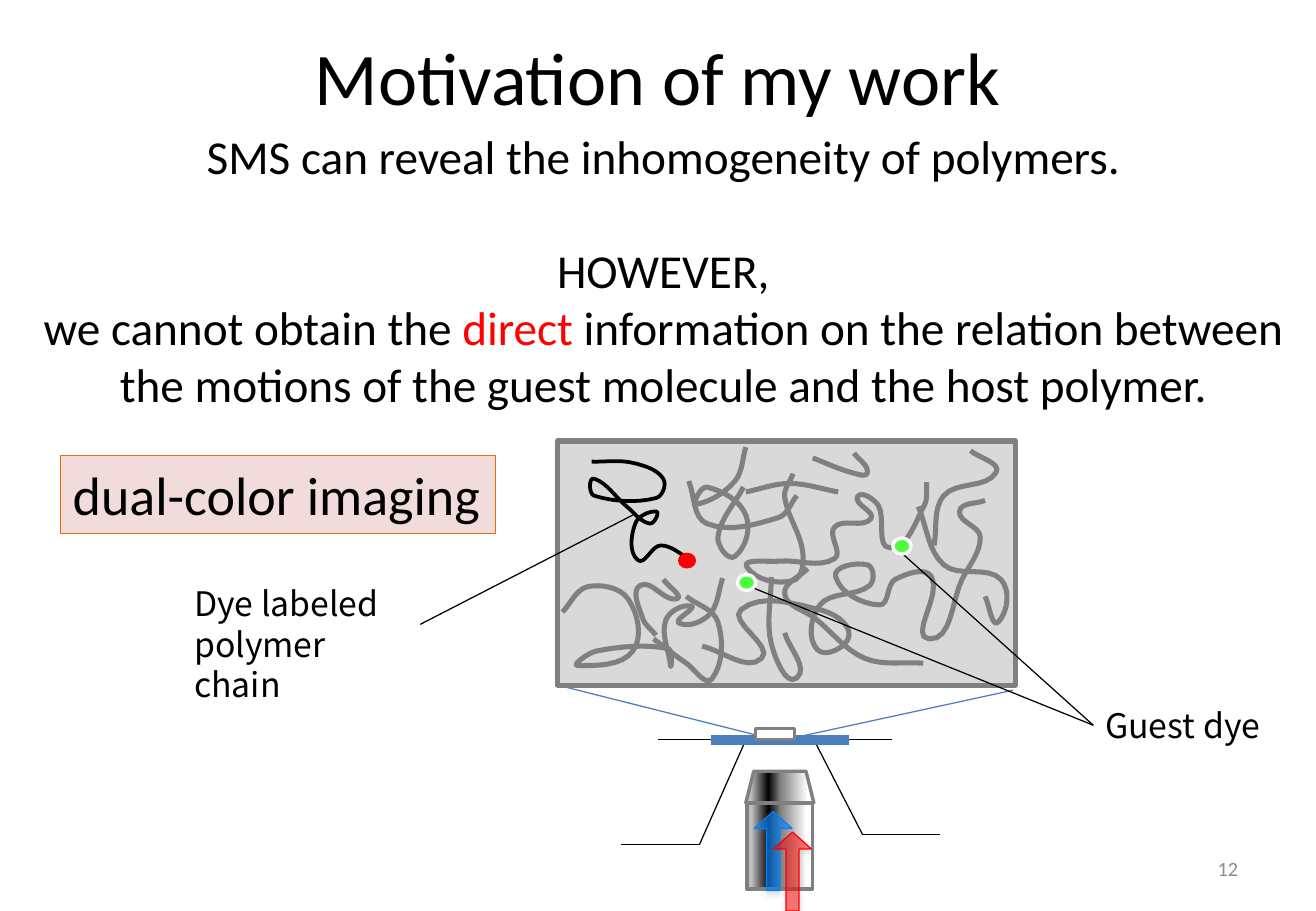
from dataclasses import dataclass
from math import hypot

from lxml.etree import SubElement
from pptx import Presentation
from pptx.dml.color import RGBColor
from pptx.enum.shapes import MSO_CONNECTOR, MSO_SHAPE as Preset
from pptx.enum.text import MSO_ANCHOR as Anchor, PP_ALIGN as Align
from pptx.oxml.ns import qn
from pptx.util import Pt


@dataclass(frozen=True)
class Theme:
    """Colours, fonts and type sizes of the slide."""
    black: str = "000000"
    white: str = "FFFFFF"
    gray: str = "808080"
    panel: str = "D9D9D9"
    red: str = "FF0000"
    green: str = "4BFD3D"
    light_blue: str = "0080FF"
    glass: str = "4B7EBC"
    callout: str = "F2DCDB"
    orange: str = "E46C0A"
    number: str = "8C8C8C"
    metal: tuple = ((7, "BFBFBF"), (33, "000000"), (51, "808080"), (91, "FFFFFF"))
    font: str = "Calibri"
    label_font: str = "Noto Sans CJK JP"
    title_size: int = 44
    callout_size: int = 32
    body_size: int = 28
    label_size: int = 20
    number_size: int = 12


@dataclass(frozen=True)
class Box:
    """A rectangle in points."""
    left: float
    top: float
    width: float
    height: float

    def inner(self, left, top, width, height):
        """Return a box placed relative to this one."""
        return Box(self.left + left, self.top + top, width, height)

    def point(self, x, y):
        """Return a point placed relative to this box."""
        return self.left + x, self.top + y

    def lengths(self):
        """Return the four lengths for python-pptx."""
        return Pt(self.left), Pt(self.top), Pt(self.width), Pt(self.height)


THEME = Theme()
GRID_COLUMNS = 377
CHAIN = [(28, 17), (62, 18), (87, 31), (81, 47), (30, 45), (30, 31), (57, 54), (76, 68), (81, 58),
         (64, 68), (66, 98), (85, 86), (110, 98)]
HOST_STRANDS = [
    [(4, 141), (25, 120), (58, 130), (62, 173), (17, 185), (32, 173), (91, 171), (93, 185), (89, 148),
     (110, 136), (100, 150), (125, 143), (136, 113)],
    [(119, 169), (168, 179), (151, 139), (216, 139), (240, 160), (214, 172), (216, 135), (257, 119),
     (255, 102), (229, 112), (265, 135), (278, 114), (308, 112), (306, 163), (333, 114), (348, 79),
     (331, 58), (352, 49)],
    [(194, 27), (187, 46), (202, 92), (194, 115), (156, 104), (183, 99), (228, 97), (228, 71), (258, 64),
     (247, 46), (264, 53), (274, 88), (302, 53), (304, 34)],
    [(155, 5), (146, 33), (115, 52), (123, 38), (155, 61), (146, 95), (132, 79), (153, 38)],
    [(301, 183), (253, 179), (212, 146), (187, 126), (206, 105)],
    [(340, 8), (361, 26), (318, 45), (310, 86)],
    [(197, 45), (182, 63), (123, 68), (108, 33)],
    [(79, 163), (106, 183), (127, 196), (132, 149), (106, 128)],
    [(352, 128), (363, 149), (365, 114), (318, 102), (297, 54)],
    [(176, 112), (176, 167), (197, 195), (187, 158)],
    [(231, 42), (191, 35), (155, 42)],
    [(87, 114), (98, 130), (68, 119), (70, 146), (81, 160)],
    [(210, 14), (242, 26), (255, 26), (244, 10)],
]


def color(value):
    """Turn a hex string into a colour."""
    return RGBColor.from_string(value)


def write(frame, paragraphs, size, font=THEME.font, ink=THEME.black, align=Align.LEFT, anchor=Anchor.TOP):
    """Fill a text frame; each paragraph is a list of (text, colour or None) runs."""
    frame.word_wrap = True
    frame.vertical_anchor = anchor
    for index, runs in enumerate(paragraphs):
        paragraph = frame.add_paragraph() if index else frame.paragraphs[0]
        paragraph.alignment = align
        paragraph.font.size, paragraph.font.name = Pt(size), font
        paragraph.font.color.rgb = color(ink)
        for text, tint in runs:
            run = paragraph.add_run()
            run.text = text
            if tint:
                run.font.color.rgb = color(tint)
    return frame


def add_text(slide, box, text, size, **style):
    """Add a text box with one paragraph."""
    return write(slide.shapes.add_textbox(*box.lengths()).text_frame, [[(text, None)]], size, **style)


def add_preset(slide, preset, box, fill=None, line=None, weight=0.75):
    """Add a preset shape without shadow."""
    shape = slide.shapes.add_shape(preset, *box.lengths())
    shape.shadow.inherit = False
    if fill:
        shape.fill.solid()
        shape.fill.fore_color.rgb = color(fill)
    if line:
        shape.line.color.rgb, shape.line.width = color(line), Pt(weight)
    else:
        shape.line.fill.background()
    return shape


def add_line(slide, *points, ink=THEME.black, weight=0.75):
    """Join consecutive points with straight connectors."""
    for start, end in zip(points, points[1:]):
        line = slide.shapes.add_connector(MSO_CONNECTOR.STRAIGHT, *map(Pt, start + end))
        line.line.color.rgb, line.line.width = color(ink), Pt(weight)
        SubElement(line._element.spPr, qn("a:effectLst"))


def smooth(nodes, steps=8):
    """Return points on a smooth curve through the nodes."""
    padded = [nodes[0], *nodes, nodes[-1]]
    curve = [nodes[0]]
    for before, start, end, after in zip(padded, padded[1:], padded[2:], padded[3:]):
        reach = hypot(end[0] - start[0], end[1] - start[1])
        pull, push = ([(b - a) * reach / (hypot(q[0] - p[0], q[1] - p[1]) or 1) for a, b in zip(p, q)]
                      for p, q in ((before, end), (start, after)))
        for t in (step / steps for step in range(1, steps + 1)):
            ease = t * t * (3 - 2 * t)
            curve.append(tuple(a + ease * (b - a) + t * (1 - t) * ((1 - t) * m - t * n)
                               for a, b, m, n in zip(start, end, pull, push)))
    return curve


def add_strand(slide, panel, nodes, ink, weight):
    """Draw a polymer strand whose nodes lie on the panel grid."""
    unit = panel.width / GRID_COLUMNS
    first, *rest = [tuple(map(Pt, panel.point(x * unit, y * unit))) for x, y in smooth(nodes)]
    shape = slide.shapes.build_freeform(*first).add_line_segments(rest, close=False).convert_to_shape()
    shape.shadow.inherit = False
    shape.fill.background()
    shape.line.color.rgb, shape.line.width = color(ink), Pt(weight)


def add_metal(slide, preset, box):
    """Add one part of the objective with its metallic gradient."""
    shape = add_preset(slide, preset, box, line=THEME.gray, weight=2)
    shape.fill.gradient()
    shape.fill.gradient_angle = 0
    stops = next(shape._element.spPr.iter(qn("a:gsLst")))
    stops.clear()
    for position, value in THEME.metal:
        stop = SubElement(stops, qn("a:gs"), pos=str(position * 1000))
        SubElement(stop, qn("a:srgbClr"), val=value)


def add_beam(slide, box, ink, opacity):
    """Add a translucent laser arrow with a soft shadow."""
    shape = add_preset(slide, Preset.UP_ARROW, box, ink, ink)
    shape.adjustments[0], shape.adjustments[1] = 0.35, 0.45
    fill = shape._element.spPr.find(qn("a:solidFill")).find(qn("a:srgbClr"))
    SubElement(fill, qn("a:alpha"), val=str(opacity * 1000))
    shadow = SubElement(shape._element.spPr.find(qn("a:effectLst")), qn("a:outerShdw"),
                        blurRad=str(Pt(3.1)), dist=str(Pt(1.8)), dir="5400000", rotWithShape="0")
    tint = SubElement(shadow, qn("a:srgbClr"), val=THEME.gray)
    SubElement(tint, qn("a:alpha"), val="35000")


def draw_heading(slide, box):
    """Place the title and the statement below it."""
    add_text(slide, box.inner(26.7, 0, 702, 90), "Motivation of my work", THEME.title_size,
             align=Align.CENTER, anchor=Anchor.MIDDLE)
    body = slide.shapes.add_textbox(*box.inner(0, 72, box.width, 177).lengths()).text_frame
    write(body, [[("SMS can reveal the inhomogeneity of polymers.", None)], [("HOWEVER,", None)],
                 [("we cannot obtain the ", None), ("direct", THEME.red),
                  (" information on the relation between the motions of the guest molecule"
                   " and the host polymer.", None)]], THEME.body_size, align=Align.CENTER)
    body.paragraphs[1].space_before = Pt(THEME.body_size * 1.22)


def draw_callout(slide, box):
    """Place the name of the method in its tinted box."""
    shape = add_preset(slide, Preset.RECTANGLE, box, THEME.callout, THEME.orange)
    write(shape.text_frame, [[("dual-color imaging", None)]], THEME.callout_size)


def draw_microscope(slide, box, panel):
    """Draw the objective, stage and sample, with rays up to the panel."""
    add_metal(slide, Preset.RECTANGLE, box.inner(74.9, 43.9, 38.9, 51.1))
    for left, top, ink, opacity in ((79.2, 49, THEME.light_blue, 60), (90.7, 61.2, THEME.red, 50)):
        add_beam(slide, box.inner(left, top, 22.3, 46.8), ink, opacity)
    add_metal(slide, Preset.TRAPEZOID, box.inner(74.2, 25.2, 40.3, 18.7))
    stage = 6.5
    add_line(slide, box.point(22.3, stage), box.point(160.6, stage))
    for top, knee, foot, floor in ((74.2, 46.8, 0, 68.4), (114.5, 143.3, box.width, 62.6)):
        add_line(slide, box.point(top, stage), box.point(knee, floor), box.point(foot, floor))
    add_line(slide, box.point(53.3, stage), box.point(135.4, stage), ink=THEME.glass, weight=6)
    add_line(slide, panel.point(0, panel.height), box.point(91.4, stage), ink=THEME.glass)
    add_line(slide, box.point(97.2, stage), panel.point(270, panel.height + 3), ink=THEME.glass)
    add_preset(slide, Preset.RECTANGLE, box.inner(79.9, 0, 23, stage), THEME.white, THEME.gray, 2)


def draw_polymer(slide, box):
    """Draw the magnified film with its strands, dyes and labels."""
    add_preset(slide, Preset.RECTANGLE, box, THEME.panel, THEME.gray, 3)
    add_strand(slide, box, CHAIN, THEME.black, 2.25)
    for strand in HOST_STRANDS:
        add_strand(slide, box, strand, THEME.gray, 3)
    guest = box.point(317.5, 168.5)
    add_line(slide, box.point(115.9, 87.1), guest, box.point(204.5, 66.9))
    add_line(slide, box.point(44.6, 43.9), box.point(-81.4, 108.7))
    for left, top, fill, line in ((71.3, 66.2, THEME.red, None), (198.7, 57.6, THEME.green, THEME.white),
                                  (106.6, 79.2, THEME.green, THEME.white)):
        add_preset(slide, Preset.OVAL, box.inner(left, top, 10.8, 9.4), fill, line, 2)
    for label, place in (("Dye labeled polymer chain", box.inner(-222.5, 80.6, 141.1, 55.4)),
                         ("Guest dye", box.inner(317.5, 152.6, 114.5, 31.7))):
        add_text(slide, place, label, THEME.label_size, font=THEME.label_font)


def main():
    """Build the slide and save it."""
    presentation = Presentation()
    presentation.slide_width, presentation.slide_height = Pt(780), Pt(540)
    slide = presentation.slides.add_slide(presentation.slide_layouts[6])
    panel = Box(330.5, 261.4, 271.4, 144.7)
    draw_heading(slide, Box(12.2, 0, 761.8, 249))
    draw_callout(slide, Box(36, 270, 257.8, 46.1))
    draw_microscope(slide, Box(367.9, 432, 189.4, 108), panel)
    draw_polymer(slide, panel)
    add_text(slide, Box(558.7, 500.4, 182.2, 28.8), "12", THEME.number_size, ink=THEME.number,
             align=Align.RIGHT, anchor=Anchor.MIDDLE)
    presentation.save("out.pptx")


if __name__ == "__main__":
    main()
